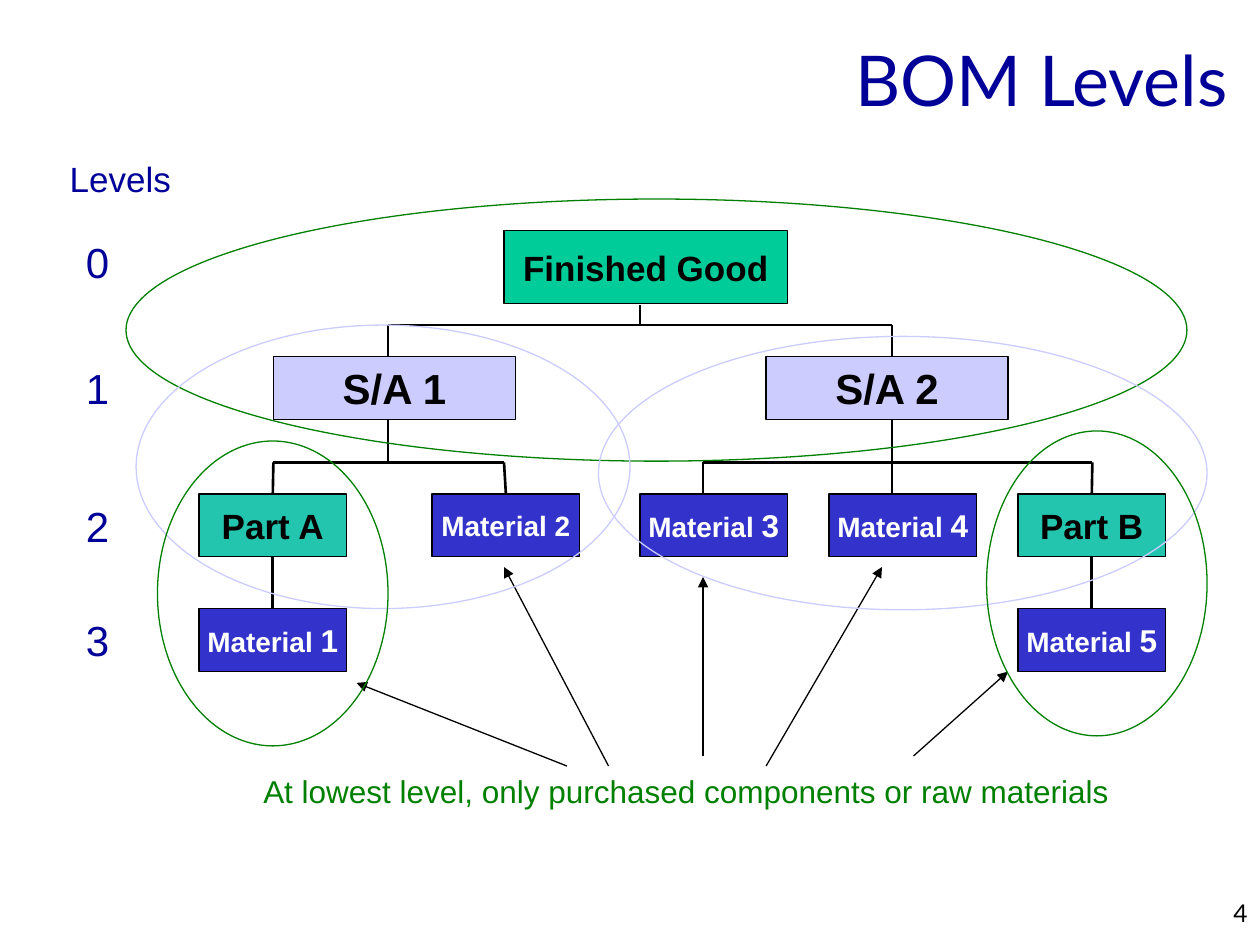
from pptx import Presentation
from pptx.dml.color import RGBColor
from pptx.enum.shapes import MSO_CONNECTOR, MSO_SHAPE
from pptx.enum.text import MSO_ANCHOR, PP_ALIGN
from pptx.oxml.ns import qn
from pptx.util import Inches, Pt
from lxml import etree

NAVY, GREEN, LILAC = "000099", "008000", "CCCCFF"
TEAL, BLUE, BLACK, WHITE = "23C5AE", "3333CC", "000000", "FFFFFF"


def write(sp, runs, color, bold=False, font="Arial", align=PP_ALIGN.CENTER,
          anchor=MSO_ANCHOR.MIDDLE, wrap=False):
    """Fill a shape with one paragraph made of (text, size) runs."""
    tf = sp.text_frame
    tf.word_wrap = wrap
    tf.vertical_anchor = anchor
    p = tf.paragraphs[0]
    p.alignment = align
    for text, size in runs:
        r = p.add_run()
        r.text = text
        r.font.name = font
        r.font.size = Pt(size)
        r.font.bold = bold
        r.font.color.rgb = RGBColor.from_string(color)


def add_line(x1, y1, x2, y2, width):
    cn = s.shapes.add_connector(MSO_CONNECTOR.STRAIGHT, Inches(x1), Inches(y1),
                                Inches(x2), Inches(y2))
    cn.line.color.rgb = RGBColor.from_string(BLACK)
    cn.line.width = Pt(width)
    etree.SubElement(cn._element.spPr, qn("a:effectLst"))
    return cn


prs = Presentation()
prs.slide_width, prs.slide_height = Inches(10), Inches(7.5)
s = prs.slides.add_slide(prs.slide_layouts[6])

# Page number and title
tb = s.shapes.add_textbox(Inches(7.92), Inches(7.08), Inches(2.08), Inches(0.25))
write(tb, [("4", 14)], BLACK, font="Lato", align=PP_ALIGN.RIGHT,
      anchor=MSO_ANCHOR.TOP, wrap=True)
tb = s.shapes.add_textbox(Inches(0.17), 0, Inches(9.67), Inches(1.25))
write(tb, [("BOM Levels", 40)], NAVY, font="Lato", align=PP_ALIGN.RIGHT, wrap=True)

# Boxes of the bill of materials
level_y = [1.83, 2.83, 3.92, 4.83]
boxes = {}
for runs, level, x, w, h, fill, color in [
    ([("Finished Good", 20)], 0, 4, 2.25, 0.58, "00CC99", BLACK),
    ([("S/A 1", 24)], 1, 2.17, 1.92, 0.5, LILAC, BLACK),
    ([("S/A 2", 24)], 1, 6.08, 1.92, 0.5, LILAC, BLACK),
    ([("Part A", 20)], 2, 1.58, 1.17, 0.5, TEAL, BLACK),
    ([("Material 2", 16)], 2, 3.43, 1.17, 0.5, BLUE, WHITE),
    ([("Material ", 16), ("3", 18)], 2, 5.08, 1.17, 0.5, BLUE, WHITE),
    ([("Material ", 16), ("4", 18)], 2, 6.58, 1.17, 0.5, BLUE, WHITE),
    ([("Part B", 20)], 2, 8.08, 1.17, 0.5, TEAL, BLACK),
    ([("Material ", 16), ("1", 18)], 3, 1.58, 1.17, 0.5, BLUE, WHITE),
    ([("Material ", 16), ("5", 18)], 3, 8.08, 1.17, 0.5, BLUE, WHITE),
]:
    sp = s.shapes.add_shape(MSO_SHAPE.RECTANGLE, Inches(x), Inches(level_y[level]),
                            Inches(w), Inches(h))
    sp.shadow.inherit = False
    sp.fill.solid()
    sp.fill.fore_color.rgb = RGBColor.from_string(fill)
    sp.line.color.rgb = RGBColor.from_string(BLACK)
    sp.line.width = Pt(0.75)
    write(sp, runs, color, bold=True)
    boxes["".join(text for text, size in runs)] = sp

# Branches: a stem down to a bar, then drops to the children
for stem_x, stem_y, bar_y, child_y, children in [
    (5.08, 2.42, 2.58, 2.83, [(3.08, None), (7.08, None)]),
    (3.08, 3.33, 3.67, 3.92, [(2.17, "Part A"), (4, "Material 2")]),
    (7.08, 3.33, 3.67, 3.92, [(5.58, None), (7.08, None), (8.67, "Part B")]),
]:
    add_line(children[0][0], bar_y, children[-1][0], bar_y, 1.5)
    add_line(stem_x, stem_y, stem_x, bar_y, 1.5)
    for x, child in children:
        cn = add_line(x, bar_y, x, child_y, 1.5)
        if child:
            cn.end_connect(boxes[child], 0)
for x, part, material in [(2.17, "Part A", "Material 1"), (8.67, "Part B", "Material 5")]:
    cn = add_line(x, 4.42, x, 4.83, 1.5)
    cn.begin_connect(boxes[part], 2)
    cn.end_connect(boxes[material], 0)

# Level labels and footnote
labels = [("Levels", 20, NAVY, 0.45, 1.2, 1.01, 0.43)]
labels += [(str(i), 24, NAVY, 0.58, y, 0.39, 0.5) for i, y in enumerate(level_y)]
labels.append(("At lowest level, only purchased components or raw materials",
               18, GREEN, 1.99, 6.08, 6.91, 0.4))
for text, size, color, x, y, w, h in labels:
    tb = s.shapes.add_textbox(Inches(x), Inches(y), Inches(w), Inches(h))
    write(tb, [(text, size)], color)

# Arrows from the footnote to the materials
for ends in [(4.5, 6.08, 2.83, 5.42), (4.83, 6.08, 4, 4.5), (5.58, 6, 5.58, 4.58),
             (6.08, 6.08, 7, 4.5), (7.25, 6, 8, 5.33)]:
    cn = add_line(*ends, 0.75)
    etree.SubElement(cn.line._get_or_add_ln(), qn("a:tailEnd"), type="triangle")

# Ellipses around each single-level group
for x, y, w, h, color in [
    (1, 1.58, 8.42, 2.08, GREEN),
    (1.08, 2.58, 3.92, 2.25, LILAC),
    (4.75, 2.67, 4.83, 2.17, LILAC),
    (1.25, 3.5, 1.83, 2.42, GREEN),
    (7.83, 3.42, 1.75, 2.42, GREEN),
]:
    sp = s.shapes.add_shape(MSO_SHAPE.OVAL, Inches(x), Inches(y), Inches(w), Inches(h))
    sp.shadow.inherit = False
    sp.fill.background()
    sp.line.color.rgb = RGBColor.from_string(color)
    sp.line.width = Pt(0.75)

prs.save("out.pptx")
